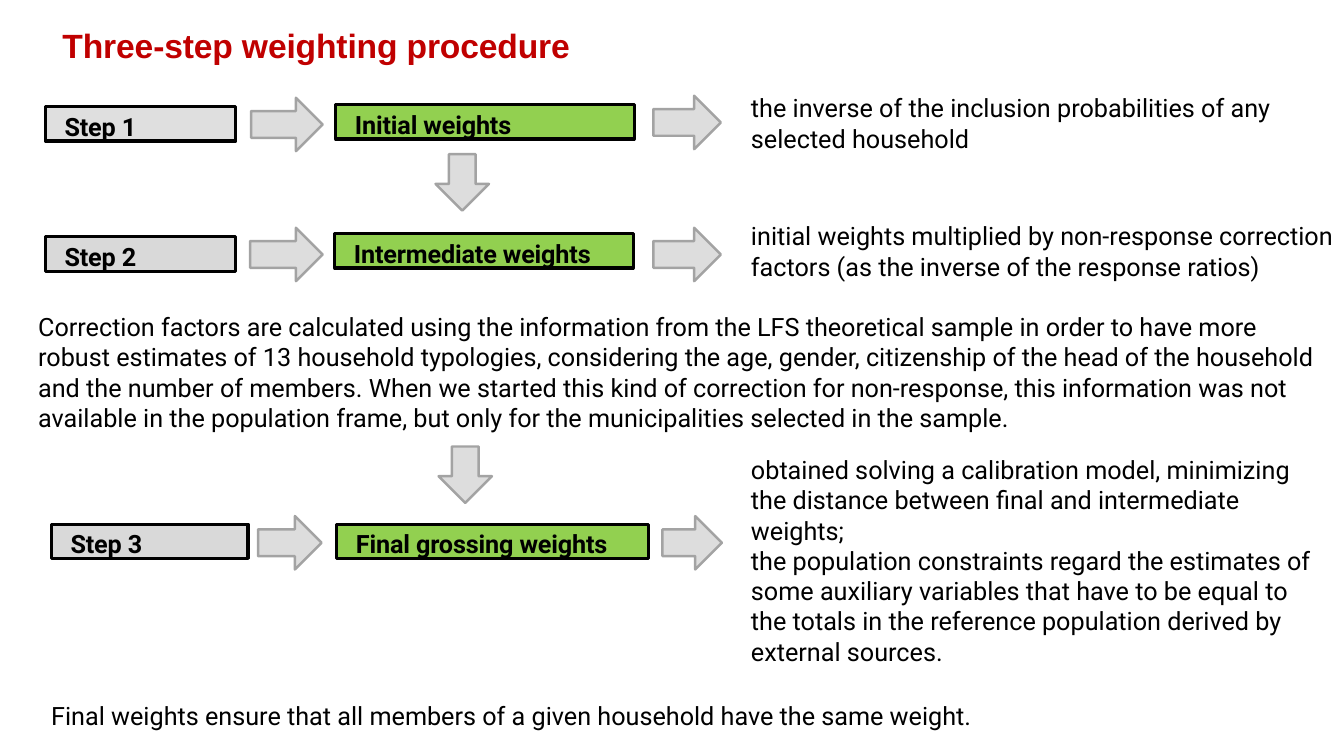
from pptx import Presentation
from pptx import util as u
from pptx.dml.color import RGBColor
from pptx.enum import shapes, text

COLORS = {
    "black": "000000",
    "red": "C00000",
    "green": "92D050",
    "light": "DFDFDF",
    "gray": "D9D9D9",
    "arrow": "DDDDDD",
    "edge": "A3A3A3",
}
KINDS = shapes.MSO_SHAPE


def color(name):
    return RGBColor.from_string(COLORS[name])


def place(item, box):
    item.left, item.top, item.width, item.height = map(u.Inches, box)


def write(item, words, font="Roboto", size=18, tint="black", bold=False,
          inset=(0.1, 0.05, 0.1, 0.05), before=0, track=0, wrap=True):
    frame = item.text_frame
    frame.text = words
    frame.word_wrap = wrap
    frame.auto_size = text.MSO_AUTO_SIZE.NONE
    frame.vertical_anchor = text.MSO_ANCHOR.TOP
    (frame.margin_left, frame.margin_top,
     frame.margin_right, frame.margin_bottom) = map(u.Inches, inset)
    for para in frame.paragraphs:
        para.alignment = text.PP_ALIGN.LEFT
        para.space_before = u.Pt(before)
        for run in para.runs:
            run.font.name = font
            run.font.size = u.Pt(size)
            run.font.bold = bold
            run.font.color.rgb = color(tint)
            if track:
                run._r.get_or_add_rPr().set("spc", str(track))


def add_form(tree, kind, box, fill, edge, width):
    form = tree.add_shape(kind, *map(u.Inches, box))
    form.shadow.inherit = False
    form.fill.solid()
    form.fill.fore_color.rgb = color(fill)
    form.line.color.rgb = color(edge)
    form.line.width = u.Pt(width)
    return form


def add_label(tree, words, box, fill):
    label = add_form(tree, KINDS.RECTANGLE, box, fill, "black", 2.28)
    write(label, words, bold=True, inset=(0.19, 0.04, 0, 0), before=3, track=-10)


def add_arrow(tree, kind, box):
    add_form(tree, kind, box, "arrow", "edge", 1.75)


def add_note(tree, words, box):
    write(tree.add_textbox(*map(u.Inches, box)), words)


def add_step(slide, name, fill, name_box, goal, goal_box, note, note_box, arrows):
    tree = slide.shapes.add_group_shape().shapes
    add_label(tree, goal, goal_box, "green")
    add_label(tree, name, name_box, fill)
    add_note(tree, note, note_box)
    for left, top, width in arrows:
        add_arrow(tree, KINDS.RIGHT_ARROW, (left, top, width, 0.53))


def main():
    deck = Presentation()
    deck.slide_width, deck.slide_height = u.Inches(13.33), u.Inches(7.5)
    slide = deck.slides.add_slide(deck.slide_layouts[5])

    title = slide.shapes.title
    place(title, (0.51, 0.2, 5.41, 0.5))
    write(title, "Three-step weighting procedure", font="Arial", size=24,
          tint="red", bold=True, inset=(0.11, 0.05, 0.1, 0.05), before=1,
          track=-10, wrap=False)

    add_note(slide.shapes,
             "Correction factors are calculated using the information from the LFS "
             "theoretical sample in order to have more robust estimates of 13 household "
             "typologies, considering the age, gender, citizenship of the head of the "
             "household and the number of members. When we started this kind of "
             "correction for non-response, this information was not available in the "
             "population frame, but only for the municipalities selected in the sample.",
             (0.28, 3.04, 12.95, 1.62))
    add_note(slide.shapes,
             "Final weights ensure that all members of a given household have the same "
             "weight.", (0.41, 6.9, 10.9, 0.71))

    add_step(slide, "Step 1", "light", (0.45, 1.06, 1.89, 0.34),
             "Initial weights", (3.33, 1.04, 2.96, 0.34),
             "the inverse of the inclusion probabilities of any selected household",
             (7.35, 0.87, 5.58, 0.71), [(6.48, 0.95, 0.67), (2.49, 0.97, 0.71)])
    add_step(slide, "Step 2", "gray", (0.45, 2.35, 1.89, 0.34),
             "Intermediate weights", (3.32, 2.32, 2.96, 0.34),
             "initial weights multiplied by non-response correction factors "
             "(as the inverse of the response ratios)",
             (7.35, 2.14, 5.99, 0.71), [(6.48, 2.26, 0.67), (2.48, 2.26, 0.72)])
    add_step(slide, "Step 3", "gray", (0.51, 5.2, 1.95, 0.34),
             "Final grossing weights", (3.34, 5.2, 3.09, 0.34),
             "obtained solving a calibration model, minimizing the distance between "
             "final and intermediate weights;\n"
             "the population constraints regard the estimates of some auxiliary "
             "variables that have to be equal to the totals in the reference "
             "population derived by external sources.",
             (7.35, 4.46, 5.82, 2.22), [(6.57, 5.12, 0.59), (2.56, 5.12, 0.63)])

    for left, top in [(4.32, 1.53), (4.35, 4.43)]:
        add_arrow(slide.shapes, KINDS.DOWN_ARROW, (left, top, 0.53, 0.56))

    deck.save("out.pptx")


if __name__ == "__main__":
    main()
